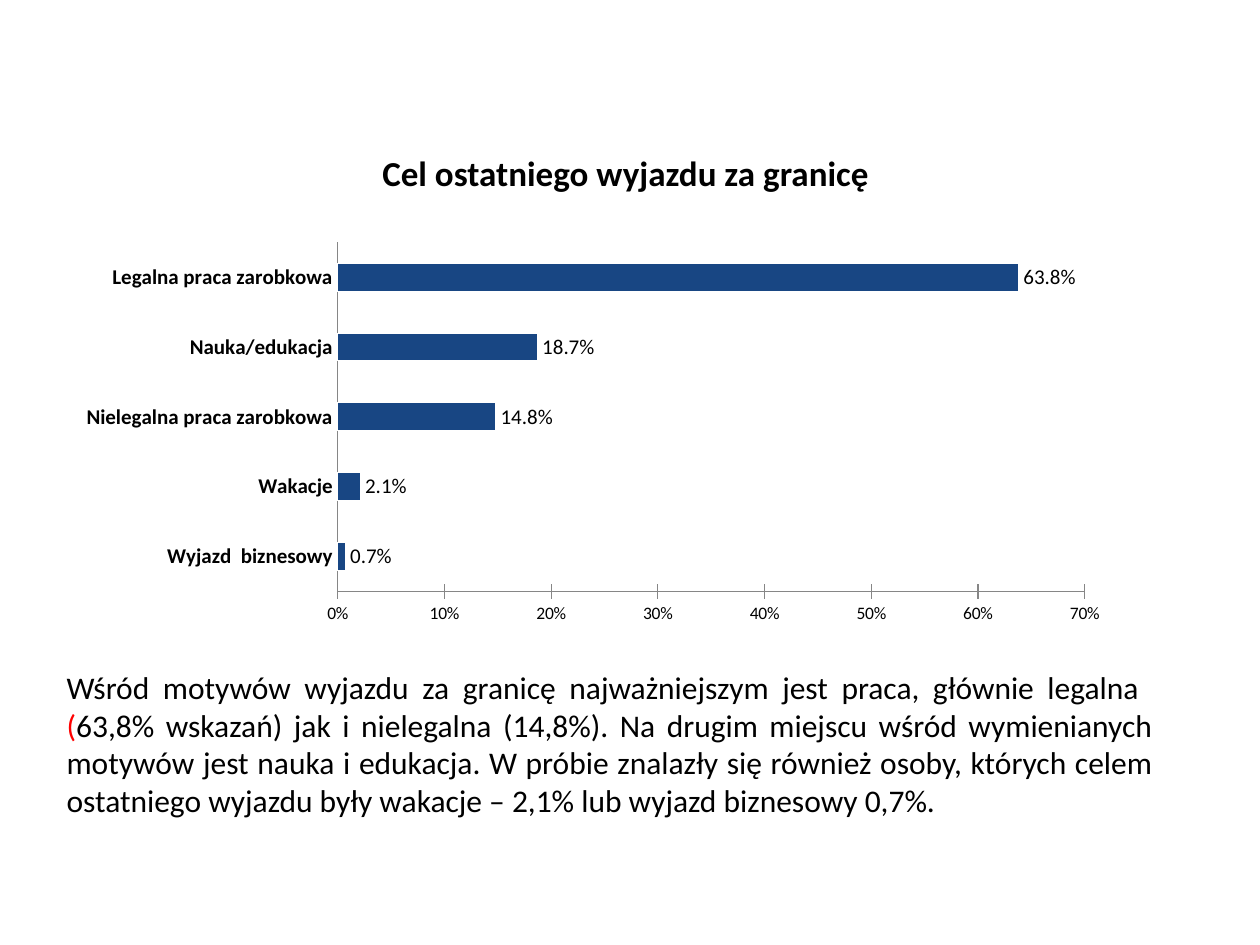
"""Build a slide with a bar chart of reasons for the last trip abroad."""
from dataclasses import dataclass

from lxml import etree
from pptx import Presentation
from pptx.chart.data import CategoryChartData
from pptx.dml.color import RGBColor
from pptx.enum.chart import XL_CHART_TYPE, XL_LABEL_POSITION, XL_TICK_MARK
from pptx.enum.text import MSO_ANCHOR, PP_ALIGN
from pptx.util import Inches, Pt

BAR_CLUSTERED = XL_CHART_TYPE.BAR_CLUSTERED
OUTSIDE_END = XL_LABEL_POSITION.OUTSIDE_END
TICK_NONE, TICK_CROSS = XL_TICK_MARK.NONE, XL_TICK_MARK.CROSS
CENTER, JUSTIFY = PP_ALIGN.CENTER, PP_ALIGN.JUSTIFY
TOP = MSO_ANCHOR.TOP
TITLE_ONLY = 5


@dataclass(frozen=True)
class Theme:
    font: str = "Calibri"
    text: RGBColor = RGBColor(0x00, 0x00, 0x00)
    accent: RGBColor = RGBColor(0xFF, 0x00, 0x00)
    bar: RGBColor = RGBColor(0x18, 0x46, 0x83)
    bar_edge: RGBColor = RGBColor(0xFF, 0xFF, 0xFF)
    axis: RGBColor = RGBColor(0x86, 0x86, 0x86)
    title_size: Pt = Pt(20)
    body_size: Pt = Pt(18)
    label_size: Pt = Pt(12)
    axis_size: Pt = Pt(10)


theme = Theme()


def style_font(font, size, color=theme.text, bold=False):
    font.name = theme.font
    font.size = size
    font.bold = bold
    font.color.rgb = color


presentation = Presentation()
presentation.slide_width = Inches(10)
presentation.slide_height = Inches(7.5)
slide = presentation.slides.add_slide(presentation.slide_layouts[TITLE_ONLY])

title = slide.shapes.title
title.left, title.top = Inches(0.28), Inches(1.15)
title.width, title.height = Inches(9.37), Inches(0.44)
title.text_frame.vertical_anchor = TOP
title_paragraph = title.text_frame.paragraphs[0]
title_paragraph.alignment = CENTER
title_run = title_paragraph.add_run()
title_run.text = "Cel ostatniego wyjazdu za granicę"
style_font(title_run.font, theme.title_size, bold=True)

commentary = slide.shapes.add_textbox(
    Inches(0.43), Inches(5.25), Inches(8.82), Inches(1.31)
)
commentary.text_frame.word_wrap = True
commentary_paragraph = commentary.text_frame.paragraphs[0]
commentary_paragraph.alignment = JUSTIFY
commentary_runs = [
    ("Wśród motywów wyjazdu za granicę najważniejszym jest praca, "
     "głównie legalna ", theme.text, True),
    ("(", theme.accent, False),
    ("63,8% wskazań) jak i nielegalna (14,8%). Na drugim miejscu wśród "
     "wymienianych motywów jest nauka i edukacja. W próbie znalazły się "
     "również osoby, których celem ostatniego wyjazdu były wakacje – 2,1% "
     "lub wyjazd biznesowy 0,7%.", theme.text, False),
]
for text, color, breaks_line in commentary_runs:
    run = commentary_paragraph.add_run()
    run.text = text
    style_font(run.font, theme.body_size, color)
    if breaks_line:
        commentary_paragraph.add_line_break()

reasons = {
    "Wyjazd  biznesowy": 0.007,
    "Wakacje": 0.021,
    "Nielegalna praca zarobkowa": 0.148,
    "Nauka/edukacja": 0.187,
    "Legalna praca zarobkowa": 0.638,
}
chart_data = CategoryChartData(number_format="0.0%")
chart_data.categories = list(reasons)
chart_data.add_series("Series 1", list(reasons.values()))
chart = slide.shapes.add_chart(
    BAR_CLUSTERED, Inches(0.51), Inches(1.86), Inches(8.35), Inches(3.15), chart_data
).chart
chart.has_title = False
chart.has_legend = False
style_font(chart.font, theme.axis_size)

plot = chart.plots[0]
plot.gap_width = 150
plot.overlap = -25
plot.vary_by_categories = False

series = plot.series[0]
series.format.fill.solid()
series.format.fill.fore_color.rgb = theme.bar
series.format.line.color.rgb = theme.bar_edge
labels = series.data_labels
labels.show_value = True
labels.number_format = "0.0%"
labels.number_format_is_linked = False
labels.position = OUTSIDE_END
style_font(labels.font, theme.label_size)

category_axis, value_axis = chart.category_axis, chart.value_axis
for axis, tick_mark in ((category_axis, TICK_NONE), (value_axis, TICK_CROSS)):
    axis.has_major_gridlines = False
    axis.major_tick_mark = tick_mark
    axis.minor_tick_mark = TICK_NONE
    axis.format.line.color.rgb = theme.axis
    axis.format.line.width = Pt(0.75)
style_font(category_axis.tick_labels.font, theme.label_size, bold=True)
style_font(value_axis.tick_labels.font, theme.axis_size)
value_axis.minimum_scale = 0
value_axis.maximum_scale = 0.7
value_axis.major_unit = 0.1
value_axis.tick_labels.number_format = "0%"
value_axis.tick_labels.number_format_is_linked = False

plot_area = chart.element.chart.plotArea
namespace = "{%s}" % plot_area.nsmap["c"]
for old_layout in plot_area.findall(namespace + "layout"):
    plot_area.remove(old_layout)
layout = etree.Element(namespace + "layout")
manual_layout = etree.SubElement(layout, namespace + "manualLayout")
layout_settings = {
    "layoutTarget": "inner", "xMode": "edge", "yMode": "edge",
    "x": "0.26", "y": "0.02", "w": "0.71", "h": "0.88",
}
for name, value in layout_settings.items():
    etree.SubElement(manual_layout, namespace + name).set("val", value)
plot_area.insert(0, layout)

presentation.save("out.pptx")
